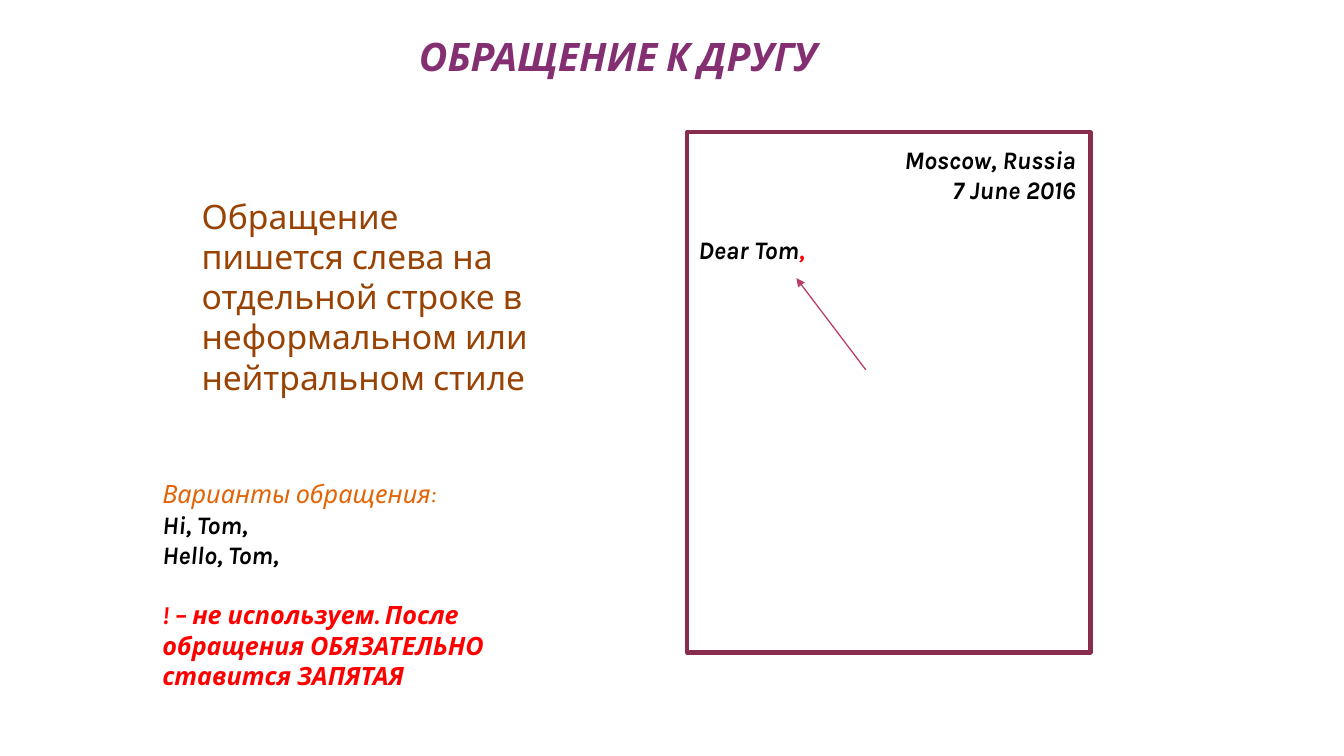
from dataclasses import dataclass, field

from lxml import etree
from pptx import Presentation
from pptx.dml.color import RGBColor
from pptx.enum.shapes import MSO_CONNECTOR, MSO_SHAPE
from pptx.enum.text import MSO_AUTO_SIZE, PP_ALIGN
from pptx.oxml.ns import qn
from pptx.slide import Slide
from pptx.util import Cm, Pt

RECT = MSO_SHAPE.RECTANGLE
STRAIGHT = MSO_CONNECTOR.STRAIGHT
FIT_TEXT = MSO_AUTO_SIZE.SHAPE_TO_FIT_TEXT
LEFT, RIGHT = PP_ALIGN.LEFT, PP_ALIGN.RIGHT

FONT = "Karla"
LINE_GAP = 21.5
COLORS = {
    "title": "852F73",
    "rule": "984204",
    "heading": "E36406",
    "text": "000000",
    "warning": "FF0000",
    "frame": "882D4D",
    "arrow": "B83D68",
}
BODY = {"size": Pt(18), "bold": True, "italic": True}
TITLE = {**BODY, "size": Pt(28)}
RULE = {"size": Pt(24)}
HEADING = {"size": Pt(18), "italic": True}


@dataclass
class Run:
    text: str
    color: str = "text"
    fmt: dict = field(default_factory=lambda: BODY)


@dataclass
class Para:
    runs: list[Run]
    align: PP_ALIGN = LEFT
    before: float = 0


@dataclass
class TextBlock:
    left: float
    top: float
    width: float
    height: float
    paras: list[Para]


BLOCKS = [
    TextBlock(10.31, 0.69, 17.42, 1.45, [
        Para([Run("ОБРАЩЕНИЕ К ДРУГУ", "title", TITLE)]),
    ]),
    TextBlock(4.83, 4.8, 8.74, 5.38, [
        Para([Run("Обращение пишется слева на отдельной строке в "
                  "неформальном или нейтральном стиле", "rule", RULE)]),
    ]),
    TextBlock(17.35, 3.51, 10.01, 4.11, [
        Para([Run("Moscow, Russia")], RIGHT),
        Para([Run("7 June 2016")], RIGHT),
        Para([Run("Dear Tom"), Run(",", "warning")], before=LINE_GAP),
    ]),
    TextBlock(3.84, 11.94, 9.37, 5.64, [
        Para([Run("Варианты обращения:", "heading", HEADING)]),
        Para([Run("Hi, Tom,")]),
        Para([Run("Hello, Tom,")]),
        Para([Run("! – не используем. После обращения ОБЯЗАТЕЛЬНО "
                  "ставится ЗАПЯТАЯ", "warning")], before=LINE_GAP),
    ]),
]


def rgb(name: str) -> RGBColor:
    return RGBColor.from_string(COLORS[name])


def add_text(s: Slide, block: TextBlock) -> None:
    sp = s.shapes.add_textbox(Cm(block.left), Cm(block.top),
                              Cm(block.width), Cm(block.height))
    tf = sp.text_frame
    tf.word_wrap = True
    tf.auto_size = FIT_TEXT
    for i, para in enumerate(block.paras):
        p = tf.add_paragraph() if i else tf.paragraphs[0]
        p.alignment = para.align
        if para.before:
            p.space_before = Pt(para.before)
        for run in para.runs:
            r = p.add_run()
            r.text = run.text
            r.font.name = FONT
            r.font.color.rgb = rgb(run.color)
            for name, value in run.fmt.items():
                setattr(r.font, name, value)


def add_letter_frame(s: Slide) -> None:
    sp = s.shapes.add_shape(RECT, Cm(17.32), Cm(3.33), Cm(10.16), Cm(13.11))
    sp.shadow.inherit = False
    sp.fill.background()
    sp.line.color.rgb = rgb("frame")
    sp.line.width = Pt(3.15)


def add_comma_arrow(s: Slide) -> None:
    """Point an arrow at the comma after the greeting."""
    cxn = s.shapes.add_connector(STRAIGHT, Cm(21.82), Cm(9.32),
                                 Cm(20.07), Cm(7.01))
    cxn.line.color.rgb = rgb("arrow")
    cxn.line.width = Pt(0.9)
    ln = cxn.line._get_or_add_ln()
    etree.SubElement(ln, qn("a:tailEnd"), type="triangle")
    etree.SubElement(ln.getparent(), qn("a:effectLst"))


def main() -> None:
    prs = Presentation()
    prs.slide_width, prs.slide_height = Cm(33.87), Cm(19.05)
    s = prs.slides.add_slide(prs.slide_layouts[6])
    for block in BLOCKS:
        add_text(s, block)
    add_letter_frame(s)
    add_comma_arrow(s)
    prs.save("out.pptx")


if __name__ == "__main__":
    main()
